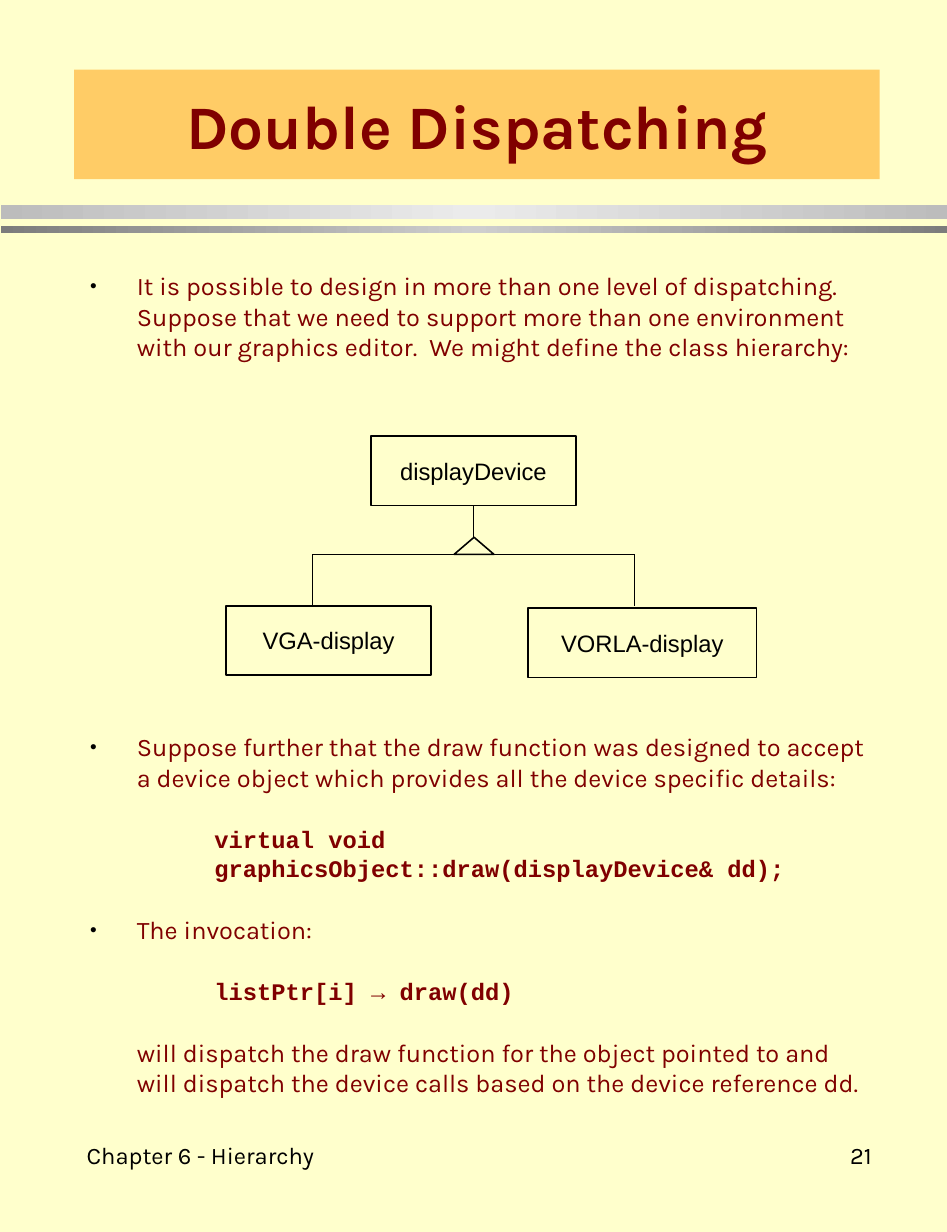
from dataclasses import dataclass

from lxml import etree
from pptx import Presentation
from pptx.dml.color import RGBColor
from pptx.enum.shapes import MSO_CONNECTOR, MSO_SHAPE
from pptx.enum.text import MSO_ANCHOR, MSO_AUTO_SIZE, PP_ALIGN
from pptx.oxml.ns import qn
from pptx.util import Inches, Pt

RECT, TRI = MSO_SHAPE.RECTANGLE, MSO_SHAPE.ISOSCELES_TRIANGLE
LINE = MSO_CONNECTOR.STRAIGHT
LEFT, MID, RIGHT = PP_ALIGN.LEFT, PP_ALIGN.CENTER, PP_ALIGN.RIGHT
TOP, CENTER = MSO_ANCHOR.TOP, MSO_ANCHOR.MIDDLE
FIXED = MSO_AUTO_SIZE.NONE
BOTTOM = 2


@dataclass(frozen=True)
class Theme:
    paper: str = "FFFFCC"
    band: str = "FFCC66"
    text: str = "800000"
    ink: str = "000000"
    sans: str = "Karla"
    code: str = "Courier New"
    label: str = "Arial"
    head: int = 39
    body: int = 16
    small: int = 15


class Page:
    def __init__(self, theme, wide, high):
        self.theme = theme
        self.deck = Presentation()
        self.deck.slide_width, self.deck.slide_height = Inches(wide), Inches(high)
        self.slide = self.deck.slides.add_slide(self.deck.slide_layouts[1])
        self.shapes = self.slide.shapes
        self.paint(self.slide.background.fill, theme.paper)

    def paint(self, fill, color):
        fill.solid()
        fill.fore_color.rgb = RGBColor.from_string(color)

    def place(self, shape, box):
        shape.left, shape.top, shape.width, shape.height = map(Inches, box)

    def frame(self, shape, anchor, side=0.11):
        """Set up the text frame and return it."""
        frame = shape.text_frame
        frame.word_wrap, frame.auto_size = True, FIXED
        frame.vertical_anchor = anchor
        frame.margin_left = frame.margin_right = Inches(side)
        frame.margin_top = frame.margin_bottom = Inches(0.05)
        return frame

    def run(self, para, text, font, size, color, bold=False):
        run = para.add_run()
        run.text = text
        run.font.name, run.font.size, run.font.bold = font, Pt(size), bold
        run.font.color.rgb = RGBColor.from_string(color)

    def title(self, text, box):
        shape = self.shapes.title
        self.place(shape, box)
        self.paint(shape.fill, self.theme.band)
        para = self.frame(shape, CENTER).paragraphs[0]
        para.alignment = MID
        self.run(para, text, self.theme.sans, self.theme.head, self.theme.text, True)

    def body(self, items, box):
        """Fill the body with (kind, space before, lines) items."""
        t = self.theme
        shape = self.slide.placeholders[1]
        self.place(shape, box)
        frame = self.frame(shape, TOP, 0.31)
        for i, (kind, gap, lines) in enumerate(items):
            para = frame.add_paragraph() if i else frame.paragraphs[0]
            code = kind == "code"
            para.alignment = LEFT
            para.space_before = Pt(gap)
            para.line_spacing = Pt(18.3 if code else 19.2)
            self.bullet(para, kind == "item", 1.09 if code else 0.41)
            for j, line in enumerate(lines):
                if j:
                    para.add_line_break()
                font, size = (t.code, t.small) if code else (t.sans, t.body)
                self.run(para, line, font, size, t.text, code)

    def bullet(self, para, shown, indent):
        props = para._p.get_or_add_pPr()
        props.set("marL", str(Inches(indent)))
        props.set("indent", str(-Inches(indent) if shown else 0))
        if not shown:
            etree.SubElement(props, qn("a:buNone"))
            return
        tint = etree.SubElement(props, qn("a:buClr"))
        etree.SubElement(tint, qn("a:srgbClr"), val=self.theme.ink)
        etree.SubElement(props, qn("a:buSzPct"), val="75000")
        etree.SubElement(props, qn("a:buChar"), char="•")

    def note(self, text, box, align):
        shape = self.shapes.add_textbox(*map(Inches, box))
        para = self.frame(shape, CENTER).paragraphs[0]
        para.alignment = align
        self.run(para, text, self.theme.sans, self.theme.small, self.theme.ink)

    def bar(self, box, edge, core):
        """Draw a bar that shades from edge to core and back."""
        shape = self.shapes.add_shape(RECT, *map(Inches, box))
        shape.shadow.inherit = False
        shape.line.fill.background()
        shape.fill.gradient()
        shape.fill.gradient_angle = 0
        stops = next(shape._element.iter(qn("a:gsLst")))
        for stop in list(stops):
            stops.remove(stop)
        for pos, color in ((0, edge), (50000, core), (100000, edge)):
            stop = etree.SubElement(stops, qn("a:gs"), pos=str(pos))
            etree.SubElement(stop, qn("a:srgbClr"), val=color)

    def shape(self, kind, box):
        shape = self.shapes.add_shape(kind, *map(Inches, box))
        shape.shadow.inherit = False
        self.paint(shape.fill, self.theme.paper)
        self.stroke(shape.line)
        return shape

    def node(self, text, box):
        shape = self.shape(RECT, box)
        para = self.frame(shape, CENTER).paragraphs[0]
        para.alignment = MID
        self.run(para, text, self.theme.label, self.theme.small, self.theme.ink)
        return shape

    def stroke(self, line):
        line.width = Pt(1)
        line.color.rgb = RGBColor.from_string(self.theme.ink)

    def line(self, *ends):
        line = self.shapes.add_connector(LINE, *map(Inches, ends))
        self.stroke(line.line)
        etree.SubElement(line._element.spPr, qn("a:effectLst"))
        return line


def main():
    page = Page(Theme(), 8.3, 10.8)
    page.bar((0.01, 1.8, 8.29, 0.12), "BCBCBC", "EBEBEB")
    page.bar((0.01, 1.98, 8.29, 0.06), "7C7C7C", "CECECE")
    page.title("Double Dispatching", (0.65, 0.61, 7.06, 0.96))
    page.body([
        ("item", 0, ["It is possible to design in more than one level of "
                     "dispatching.  Suppose that we need to support more than "
                     "one environment with our graphics editor.  We might "
                     "define the class hierarchy:"]),
        ("item", 233.4, ["Suppose further that the draw function was designed "
                         "to accept a device object which provides all the "
                         "device specific details:"]),
        ("code", 20, ["virtual void",
                      "graphicsObject::draw(displayDevice& dd);"]),
        ("item", 20.6, ["The invocation:"]),
        ("code", 20, ["listPtr[i] → draw(dd)"]),
        ("plain", 19.6, ["will dispatch the draw function for the object "
                         "pointed to and will dispatch the device calls based "
                         "on the device reference dd."]),
    ], (0.48, 2.32, 7.42, 7.67))

    base = page.node("displayDevice", (3.25, 3.82, 1.8, 0.61))
    page.node("VGA-display", (1.98, 5.31, 1.8, 0.61))
    page.node("VORLA-display", (4.63, 5.33, 2, 0.61))
    left, right, level = 2.74, 5.56, 4.86
    page.line(left, level, right, level)
    for x in (left, right):
        page.line(x, level, x, 5.31)
    stem = page.line(4.15, 4.43, 4.15, level)
    stem.begin_connect(base, BOTTOM)
    page.shape(TRI, (3.98, 4.71, 0.35, 0.15))

    page.note("Chapter 6 - Hierarchy", (0.65, 9.72, 2.58, 0.81), LEFT)
    page.note("21", (6.09, 9.72, 1.66, 0.81), RIGHT)
    page.deck.save("out.pptx")


if __name__ == "__main__":
    main()
